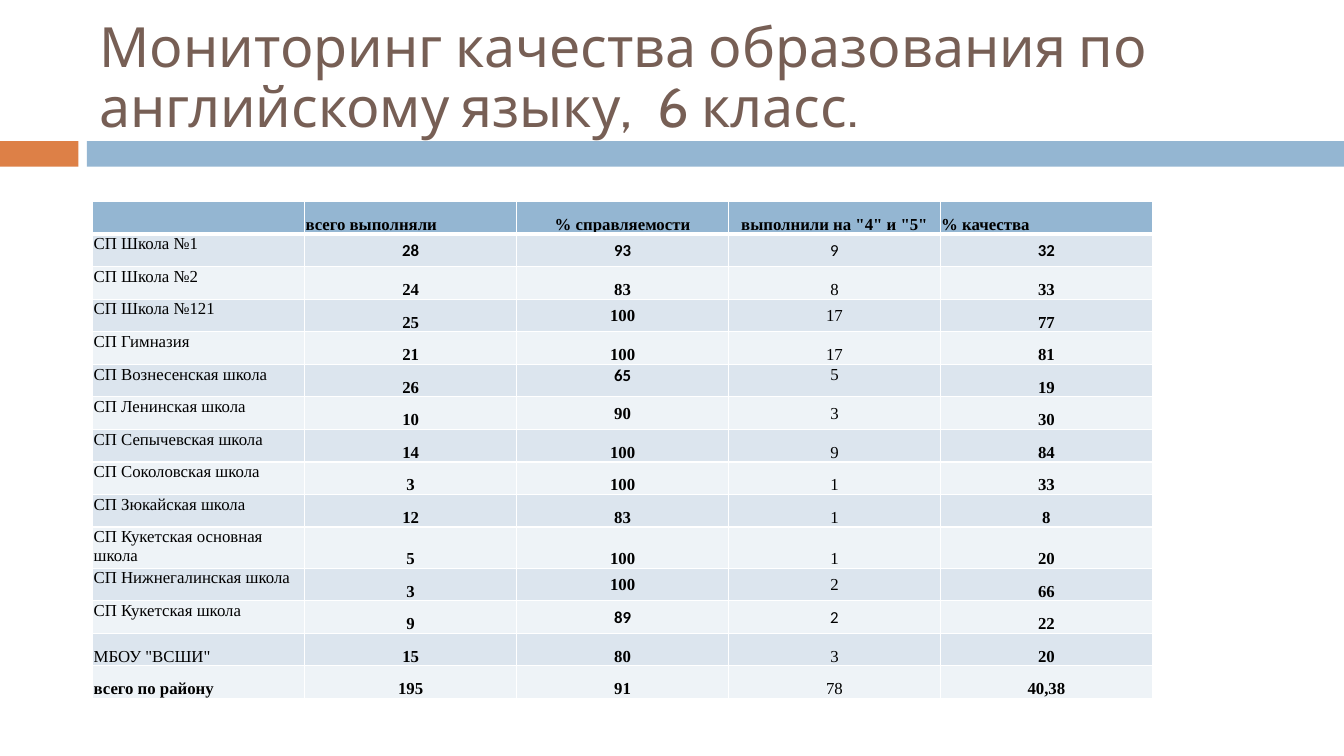
from lxml import etree
from pptx import Presentation
from pptx.dml.color import RGBColor
from pptx.enum import shapes, text
from pptx.oxml import ns
from pptx.util import Cm, Pt

TITLE = "Мониторинг качества образования по английскому языку,  6 класс."
HEADER = ("", "всего выполняли", "% справляемости", 'выполнили на "4" и "5"', "% качества")
# School, four values, vertical anchor of the two middle values
SCHOOLS = [
    ("СП Школа №1", "28", "93", "9", "32", "middle"),
    ("СП Школа №2", "24", "83", "8", "33", "bottom"),
    ("СП Школа №121", "25", "100", "17", "77", "middle"),
    ("СП Гимназия", "21", "100", "17", "81", "bottom"),
    ("СП Вознесенская школа", "26", "65", "5", "19", "top"),
    ("СП Ленинская школа", "10", "90", "3", "30", "middle"),
    ("СП Сепычевская школа", "14", "100", "9", "84", "bottom"),
    ("СП Соколовская школа", "3", "100", "1", "33", "bottom"),
    ("СП Зюкайская школа", "12", "83", "1", "8", "bottom"),
    ("СП Кукетская основная школа", "5", "100", "1", "20", "bottom"),
    ("СП Нижнегалинская школа", "3", "100", "2", "66", "middle"),
    ("СП Кукетская школа", "9", "89", "2", "22", "middle"),
    ('МБОУ "ВСШИ"', "15", "80", "3", "20", "bottom"),
    ("всего по району", "195", "91", "78", "40,38", "bottom"),
]
CALIBRI_CELLS = {(1, 1), (1, 2), (1, 3), (1, 4), (5, 2), (12, 2), (12, 3)}
BARS = [(0, 1.98, "DD8047"), (2.19, 31.68, "94B6D2")]
BAR_TOP, BAR_HEIGHT = 3.56, 0.64
TABLE_LEFT, TABLE_TOP = 2.34, 5.08
COLUMN_WIDTH, ROW_HEIGHT = 5.34, 0.82
HEADER_FILL, BAND_FILLS = "94B6D2", ("EEF3F7", "DCE5EE")
ANCHORS = {
    "top": text.MSO_ANCHOR.TOP,
    "middle": text.MSO_ANCHOR.MIDDLE,
    "bottom": text.MSO_ANCHOR.BOTTOM,
}
CELL_MARGINS = dict(margin_left=Cm(0.02), margin_right=Cm(0.02), margin_top=Cm(0.02), margin_bottom=0)


def paint(target, color):
    """Give a fill or a font a solid colour."""
    if hasattr(target, "solid"):
        target.solid()
        target.fore_color.rgb = RGBColor.from_string(color)
    else:
        target.color.rgb = RGBColor.from_string(color)


def apply(target, formats):
    for name, value in formats.items():
        setattr(target, name, value)


def add_borders(cell, row):
    """White cell borders, with a thicker line between header and body."""
    properties = cell._tc.get_or_add_tcPr()
    widths = {"lnL": 1, "lnR": 1, "lnT": 3 if row == 1 else 1, "lnB": 3 if row == 0 else 1}
    for side, width in widths.items():
        line = etree.SubElement(properties, ns.qn(f"a:{side}"), w=str(Pt(width)))
        fill = etree.SubElement(line, ns.qn("a:solidFill"))
        etree.SubElement(fill, ns.qn("a:srgbClr"), val="FFFFFF")


def anchor_of(row, column, middle_anchor):
    if row == 0:
        return "bottom"
    if column == 0:
        return "bottom" if row > len(SCHOOLS) - 2 else "top"
    if column in (2, 3):
        return middle_anchor
    return "middle" if row == 1 else "bottom"


def alignment_of(row, column):
    if column == 0:
        return text.PP_ALIGN.LEFT
    if row == 0 and column in (1, 4):
        return text.PP_ALIGN.JUSTIFY
    return text.PP_ALIGN.CENTER


def is_bold(row, column):
    if column == 0:
        return row == len(SCHOOLS)
    return row == 0 or column != 3


def fill_cell(cell, row, column, wording, middle_anchor):
    add_borders(cell, row)
    paint(cell.fill, BAND_FILLS[row % 2] if row else HEADER_FILL)
    apply(cell, CELL_MARGINS)
    cell.vertical_anchor = ANCHORS[anchor_of(row, column, middle_anchor)]
    if not wording:
        return
    paragraph = cell.text_frame.paragraphs[0]
    paragraph.alignment = alignment_of(row, column)
    run = paragraph.add_run()
    run.text = wording
    font_name = "Calibri" if (row, column) in CALIBRI_CELLS else "Times New Roman"
    apply(run.font, dict(name=font_name, size=Pt(12), bold=is_bold(row, column)))
    paint(run.font, "000000")


def add_bars(slide):
    for left, width, color in BARS:
        bar = slide.shapes.add_shape(
            shapes.MSO_SHAPE.RECTANGLE, Cm(left), Cm(BAR_TOP), Cm(width), Cm(BAR_HEIGHT))
        bar.shadow.inherit = False
        paint(bar.fill, color)
        bar.line.fill.background()


def add_title(slide):
    box = slide.shapes.add_textbox(Cm(2.26), Cm(0.64), Cm(30.2), Cm(2.74))
    apply(box.text_frame, dict(word_wrap=True, vertical_anchor=text.MSO_ANCHOR.MIDDLE))
    paragraph = box.text_frame.paragraphs[0]
    paragraph.line_spacing = 0.9
    run = paragraph.add_run()
    run.text = TITLE
    apply(run.font, dict(name="Cabin", size=Pt(39.6)))
    paint(run.font, "775F55")


def add_results(slide):
    rows = [(*HEADER, "bottom"), *SCHOOLS]
    table = slide.shapes.add_table(
        len(rows), len(HEADER), Cm(TABLE_LEFT), Cm(TABLE_TOP),
        Cm(COLUMN_WIDTH * len(HEADER)), Cm(ROW_HEIGHT * len(rows))).table
    apply(table, dict(first_row=False, horz_banding=False))
    for table_column in table.columns:
        table_column.width = Cm(COLUMN_WIDTH)
    for row, (*wordings, middle_anchor) in enumerate(rows):
        table.rows[row].height = Cm(ROW_HEIGHT)
        for column, wording in enumerate(wordings):
            fill_cell(table.cell(row, column), row, column, wording, middle_anchor)


def main():
    presentation = Presentation()
    apply(presentation, dict(slide_width=Cm(33.87), slide_height=Cm(19.05)))
    slide = presentation.slides.add_slide(presentation.slide_layouts[6])
    add_bars(slide)
    add_title(slide)
    add_results(slide)
    presentation.save("out.pptx")


if __name__ == "__main__":
    main()
